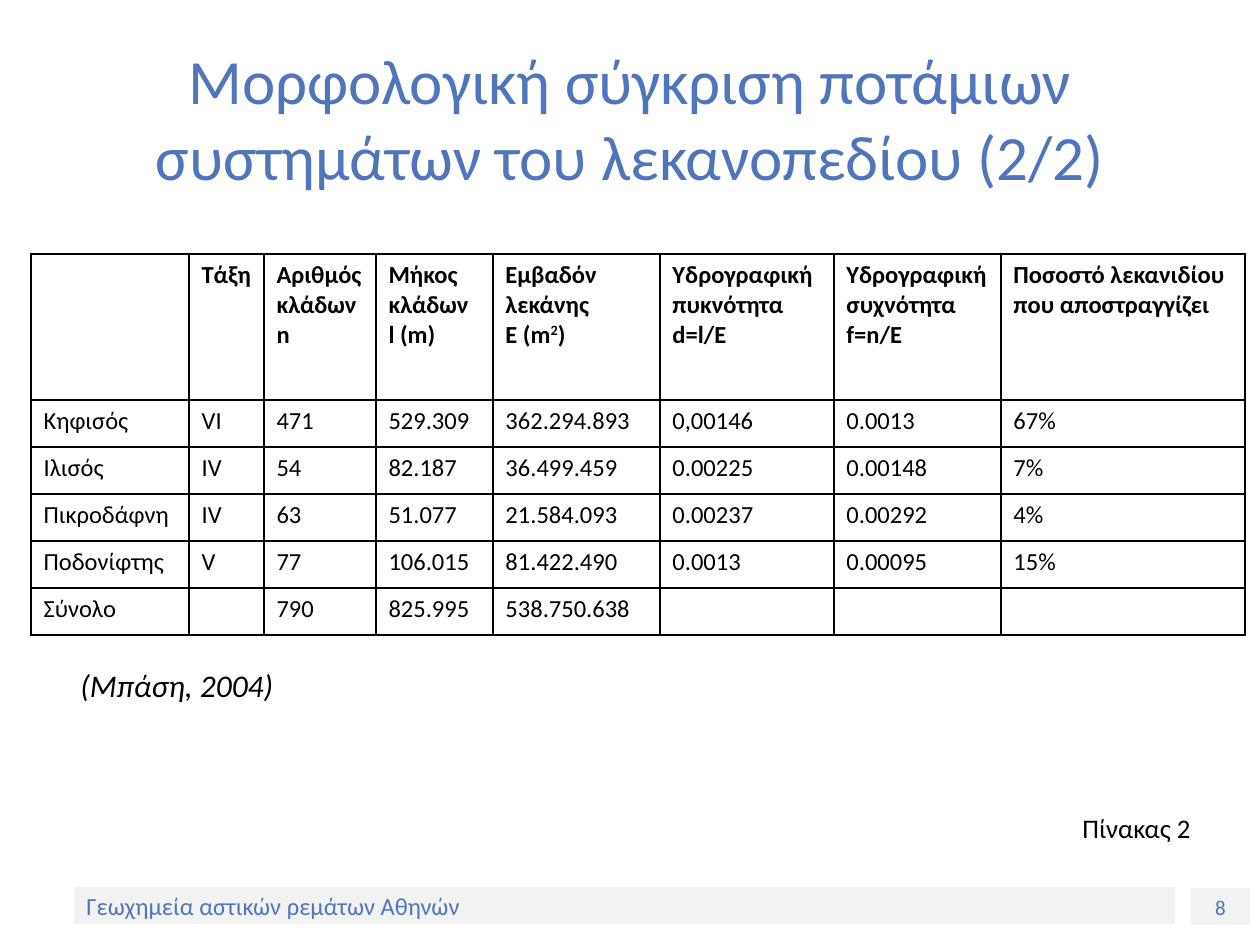
"""Build the slide that compares the river systems of the basin."""
from lxml import etree
from pptx import Presentation
from pptx.dml.color import RGBColor
from pptx.enum.shapes import MSO_SHAPE
from pptx.enum.text import MSO_ANCHOR, PP_ALIGN
from pptx.oxml.ns import qn
from pptx.util import Pt

EMU_PER_PX = 914400 / 126
FONT = "Calibri"
COLORS = {"blue": "5075BC", "black": "000000", "gray": "F2F2F2", "white": "FFFFFF"}
RECTANGLE = MSO_SHAPE.RECTANGLE
TOP, MIDDLE = MSO_ANCHOR.TOP, MSO_ANCHOR.MIDDLE
LEFT, CENTER = PP_ALIGN.LEFT, PP_ALIGN.CENTER

TABLE_SIZE = 14
COLUMN_WIDTHS = [158, 75, 112, 117, 167, 174, 167, 244]
HEADER_HEIGHT, ROW_HEIGHT = 146, 47
SUPERSCRIPT = "2"
HEADERS = [
    "",
    "Τάξη",
    "Αριθμός κλάδων\nn",
    "Μήκος κλάδων\nl (m)",
    "Εμβαδόν λεκάνης\nΕ (m",
    "Υδρογραφική\nπυκνότητα\nd=l/E",
    "Υδρογραφική συχνότητα\nf=n/E",
    "Ποσοστό λεκανιδίου\nπου αποστραγγίζει",
]
AREA_COLUMN = 4
RIVERS = [
    ["Κηφισός", "VI", "471", "529.309", "362.294.893", "0,00146", "0.0013", "67%"],
    ["Ιλισός", "IV", "54", "82.187", "36.499.459", "0.00225", "0.00148", "7%"],
    ["Πικροδάφνη", "IV", "63", "51.077", "21.584.093", "0.00237", "0.00292", "4%"],
    ["Ποδονίφτης", "V", "77", "106.015", "81.422.490", "0.0013", "0.00095", "15%"],
    ["Σύνολο", "", "790", "825.995", "538.750.638", "", "", ""],
]


def px(*lengths):
    """Turn pixel lengths into EMU."""
    return [round(length * EMU_PER_PX) for length in lengths]


def style_text(text_frame, size, color, align=LEFT, bold=False, italic=False):
    """Format every run of a text frame."""
    for paragraph in text_frame.paragraphs:
        paragraph.alignment = align
        for run in paragraph.runs:
            run.font.name = FONT
            run.font.size = Pt(size)
            run.font.bold = bold
            run.font.italic = italic
            run.font.color.rgb = RGBColor.from_string(COLORS[color])


def add_text(slide, box, text, size, color, align=LEFT, anchor=TOP, wrap=True, italic=False):
    """Add a text box."""
    text_frame = slide.shapes.add_textbox(*px(*box)).text_frame
    text_frame.word_wrap = wrap
    text_frame.vertical_anchor = anchor
    text_frame.text = text
    style_text(text_frame, size, color, align, italic=italic)


def add_panel(slide, box, text, size, color, fill, align=LEFT, anchor=TOP):
    """Add a filled rectangle with text."""
    shape = slide.shapes.add_shape(RECTANGLE, *px(*box))
    shape.shadow.inherit = False
    shape.fill.solid()
    shape.fill.fore_color.rgb = RGBColor.from_string(COLORS[fill])
    shape.line.fill.background()
    shape.text_frame.vertical_anchor = anchor
    shape.text_frame.text = text
    style_text(shape.text_frame, size, color, align)


def add_borders(cell):
    """Draw a thin black line on each side of a cell."""
    properties = cell._tc.get_or_add_tcPr()
    for position, side in enumerate(("a:lnL", "a:lnR", "a:lnT", "a:lnB")):
        line = etree.Element(qn(side), w=str(Pt(1)))
        fill = etree.SubElement(line, qn("a:solidFill"))
        etree.SubElement(fill, qn("a:srgbClr"), val=COLORS["black"])
        properties.insert(position, line)


def fill_cell(cell, text, bold):
    """Write and format one table cell."""
    cell.fill.background()
    add_borders(cell)
    cell.text_frame.text = text
    style_text(cell.text_frame, TABLE_SIZE, "black", bold=bold)
    if not text:
        end_properties = cell.text_frame.paragraphs[0]._p.get_or_add_endParaRPr()
        end_properties.set("sz", str(TABLE_SIZE * 100))


def add_area_unit(cell):
    """Finish the area heading with its raised exponent."""
    paragraph = cell.text_frame.paragraphs[-1]
    exponent = paragraph.add_run()
    exponent.text = SUPERSCRIPT
    paragraph.add_run().text = ")"
    style_text(cell.text_frame, TABLE_SIZE, "black", bold=True)
    exponent._r.get_or_add_rPr().set("baseline", "30000")


def add_river_table(slide, left, top):
    """Add the table of river systems."""
    rows = [HEADERS] + RIVERS
    heights = [HEADER_HEIGHT] + [ROW_HEIGHT] * len(RIVERS)
    box = px(left, top, sum(COLUMN_WIDTHS), sum(heights))
    table = slide.shapes.add_table(len(rows), len(HEADERS), *box).table
    table.first_row = table.horz_banding = False
    for column, width in zip(table.columns, px(*COLUMN_WIDTHS)):
        column.width = width
    for row, height in zip(table.rows, px(*heights)):
        row.height = height
    for row_index, row in enumerate(rows):
        for column_index, text in enumerate(row):
            fill_cell(table.cell(row_index, column_index), text, bold=row_index == 0)
    add_area_unit(table.cell(0, AREA_COLUMN))


def main():
    """Build and save the slide."""
    presentation = Presentation()
    presentation.slide_width, presentation.slide_height = px(1260, 945)
    slide = presentation.slides.add_slide(presentation.slide_layouts[6])
    add_panel(slide, (1191, 888, 59, 37), "8", 12, "blue", "gray", CENTER)
    add_panel(slide, (74, 887, 1101, 37), "Γεωχημεία αστικών ρεμάτων Αθηνών", 14,
              "blue", "gray", anchor=MIDDLE)
    add_text(slide, (63, 38, 1134, 158),
             "Μορφολογική σύγκριση ποτάμιων συστημάτων του λεκανοπεδίου (2/2)",
             36, "blue", CENTER, MIDDLE)
    add_river_table(slide, 31, 254)
    add_text(slide, (68, 660, 229, 50), "(Μπάση, 2004)", 18, "black", wrap=False, italic=True)
    add_panel(slide, (1070, 806, 149, 39), "Πίνακας 2", 15.3, "black", "white")
    presentation.save("out.pptx")


if __name__ == "__main__":
    main()
